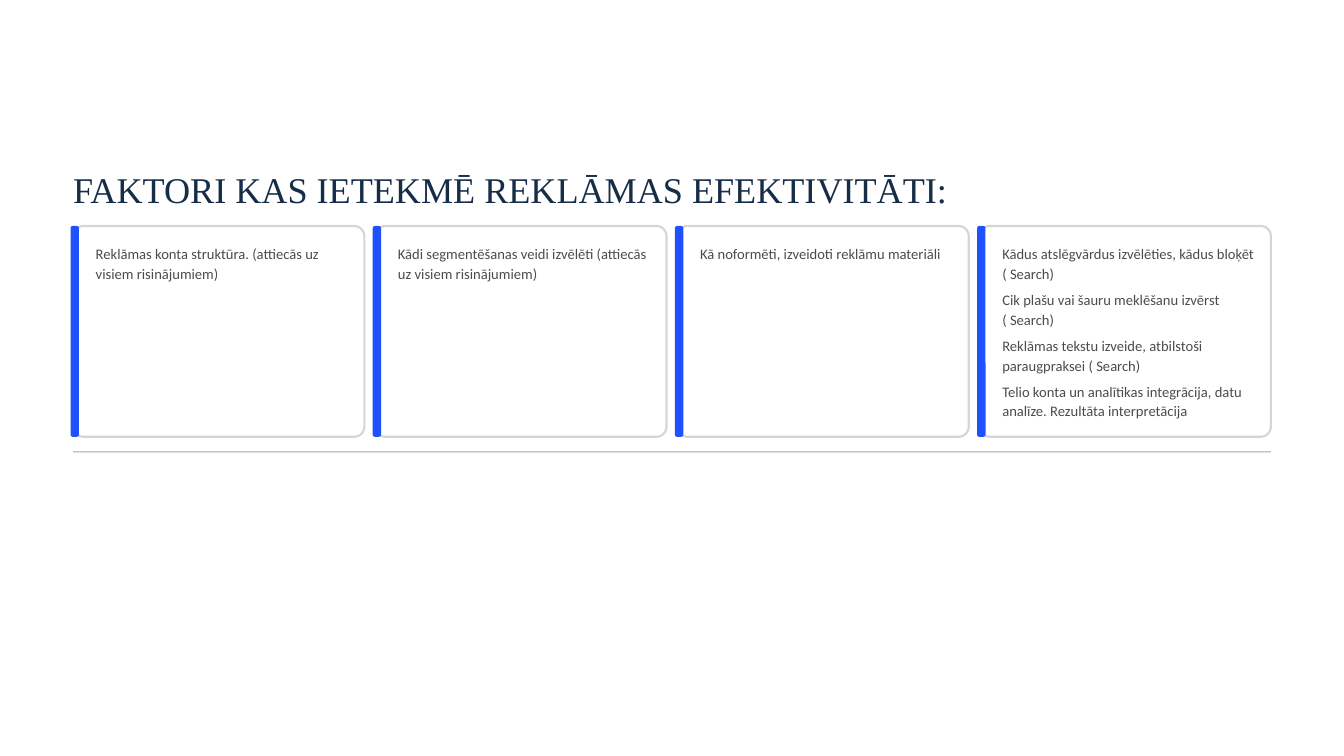
import pptx
import pptx.util
import pptx.dml.color
import pptx.enum.shapes
import pptx.enum.text
import pptx.oxml
import pptx.oxml.ns

Inches = pptx.util.Inches
Pt = pptx.util.Pt
SHAPES = pptx.enum.shapes.MSO_SHAPE
COLORS = {
    "title": "152D47",
    "text": "4C4C4D",
    "card": "FFFFFF",
    "border": "D8D4D4",
    "accent": "2150FE",
}
FRAME = {
    "margin_left": 0, "margin_right": 0, "margin_top": 0, "margin_bottom": 0,
    "vertical_anchor": pptx.enum.text.MSO_ANCHOR.TOP,
    "auto_size": pptx.enum.text.MSO_AUTO_SIZE.NONE,
    "word_wrap": True,
}
TITLE_FONT = {"name": "Times New Roman", "size": Pt(31), "bold": False}
CARD_FONT = {"name": "Calibri", "size": Pt(12.5)}

TITLE = "FAKTORI KAS IETEKMĒ REKLĀMAS EFEKTIVITĀTI:"
FACTORS = [
    ["Reklāmas konta struktūra. (attiecās uz visiem risinājumiem)"],
    ["Kādi segmentēšanas veidi izvēlēti (attiecās uz visiem risinājumiem)"],
    ["Kā noformēti, izveidoti reklāmu materiāli"],
    [
        "Kādus atslēgvārdus izvēlēties, kādus bloķēt ( Search)",
        "Cik plašu vai šauru meklēšanu izvērst ( Search)",
        "Reklāmas tekstu izveide, atbilstoši paraugpraksei ( Search)",
        "Telio konta un analītikas integrācija, datu analīze. Rezultāta interpretācija",
    ],
]


def rgb(name):
    return pptx.dml.color.RGBColor.from_string(COLORS[name])


def apply(target, values):
    for key, value in values.items():
        setattr(target, key, value)


def write(frame, lines, font, color, spacing, gap=0):
    apply(frame, FRAME)
    for index, line in enumerate(lines):
        paragraph = frame.add_paragraph() if index else frame.paragraphs[0]
        paragraph.text = line
        apply(paragraph, {
            "alignment": pptx.enum.text.PP_ALIGN.LEFT,
            "line_spacing": Pt(spacing),
            "space_before": Pt(gap if index else 0),
        })
        apply(paragraph.font, font)
        paragraph.font.color.rgb = rgb(color)


def add_title(slide, left, top, width, height):
    title = slide.shapes.title
    apply(title, {"left": Inches(left), "top": Inches(top),
                  "width": Inches(width), "height": Inches(height)})
    write(title.text_frame, [TITLE], TITLE_FONT, "title", 39)


def add_panel(slide, left, top, width, height, fill, rounding):
    panel = slide.shapes.add_shape(
        SHAPES.ROUNDED_RECTANGLE,
        Inches(left), Inches(top), Inches(width), Inches(height))
    panel.adjustments[0] = rounding
    panel.shadow.inherit = False
    panel.fill.solid()
    panel.fill.fore_color.rgb = rgb(fill)
    return panel


def add_card(slide, left, top, width, height, lines):
    # Bordered card
    card = add_panel(slide, left, top, width, height, "card", 0.048)
    card.line.color.rgb = rgb("border")
    card.line.width = Pt(1.8)
    # Accent bar on the left edge
    bar = add_panel(slide, left - 0.03, top, 0.1, height, "accent", 0.26)
    bar.line.fill.background()
    # Factors
    factors = slide.shapes.add_textbox(
        Inches(left + 0.27), Inches(top + 0.2), Inches(3), Inches(height - 0.4))
    write(factors.text_frame, lines, CARD_FONT, "text", 17, 5.25)


def add_cards(slide, left, top, width, height, gap):
    card_width = (width - gap * (len(FACTORS) - 1)) / len(FACTORS)
    for index, lines in enumerate(FACTORS):
        add_card(slide, left + index * (card_width + gap), top, card_width, height, lines)


def add_rule(slide, left, top, width):
    rule = slide.shapes.add_connector(
        pptx.enum.shapes.MSO_CONNECTOR.STRAIGHT,
        Inches(left), Inches(top), Inches(left + width), Inches(top))
    rule.line.color.rgb = rgb("text")
    rule.line.width = Pt(0.75)
    # Half transparent, without shadow
    properties = rule._element.spPr
    color = properties.find(".//" + pptx.oxml.ns.qn("a:srgbClr"))
    namespace = pptx.oxml.ns.nsdecls("a")
    color.append(pptx.oxml.parse_xml(f'<a:alpha {namespace} val="50000"/>'))
    properties.append(pptx.oxml.parse_xml(f"<a:effectLst {namespace}/>"))


def main():
    deck = pptx.Presentation()
    deck.slide_width, deck.slide_height = Inches(16), Inches(9)
    slide = deck.slides.add_slide(deck.slide_layouts[5])
    left, width = 0.87, 14.26
    add_title(slide, left, 1.97, width, 0.54)
    add_cards(slide, left, 2.69, width, 2.51, 0.13)
    add_rule(slide, left, 5.38, width)
    deck.save("out.pptx")


if __name__ == "__main__":
    main()
